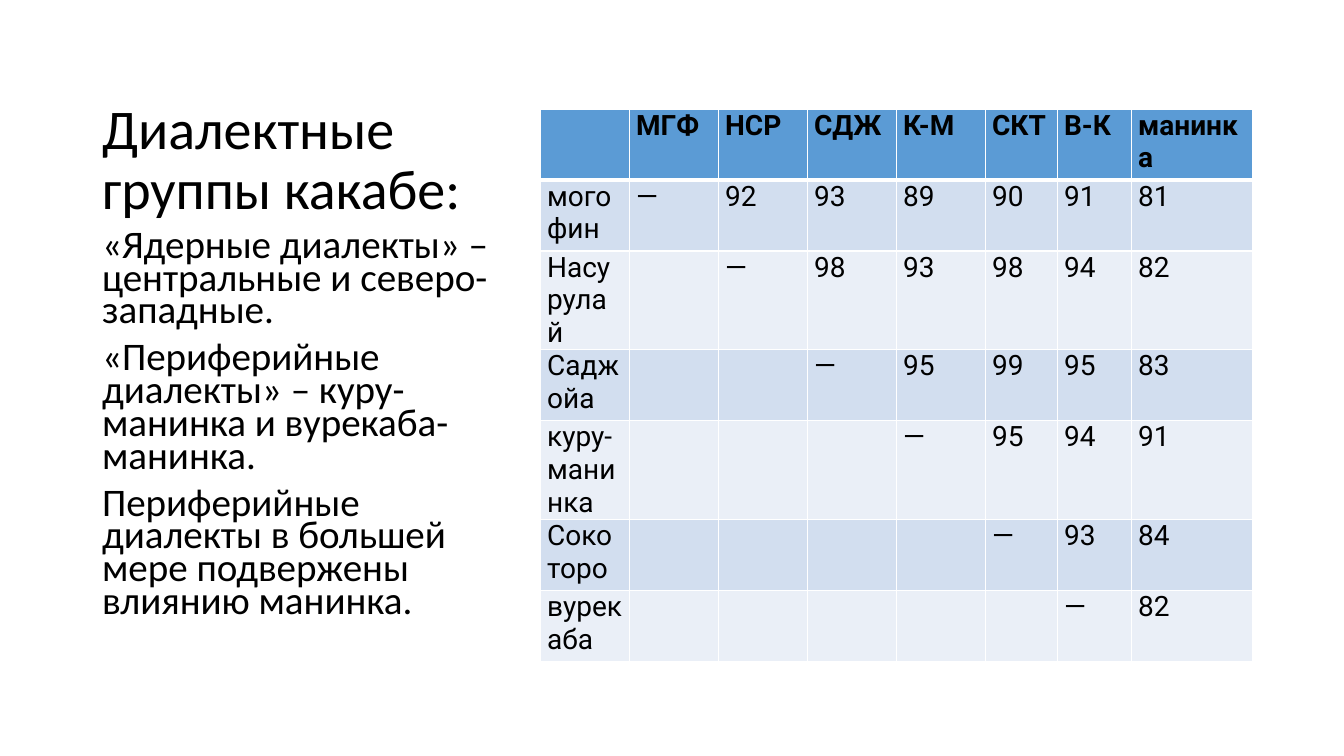
"""Build a slide on Kakabe dialect groups with a lexical similarity table."""
from lxml import etree
from pptx import Presentation
from pptx import util as u
from pptx.dml.color import RGBColor
from pptx.enum import text
from pptx.oxml.ns import qn

TITLE = "Диалектные группы какабе:"
STATEMENTS = [
    "«Ядерные диалекты» – центральные и северо-западные.",
    "«Периферийные диалекты» – куру-манинка и вурекаба-манинка.",
    "Периферийные диалекты в большей мере подвержены влиянию манинка.",
]
HEADINGS = ["", "МГФ", "НСР", "СДЖ", "К-М", "СКТ", "В-К", "манинка"]
SIMILARITY = [
    ("могофин", [92, 93, 89, 90, 91, 81]),
    ("Насурулай", [98, 93, 98, 94, 82]),
    ("Саджойа", [95, 99, 95, 83]),
    ("куру-манинка", [95, 94, 91]),
    ("Сокоторо", [93, 84]),
    ("вурекаба", [82]),
]
TITLE_BOX = (92, 50, 434, 177)
BODY_BOX = (92, 227, 434, 420)
TABLE_ORIGIN = (540, 109)
COLUMN_WIDTHS = [89, 89, 89, 89, 89, 72, 74, 121]
ROW_HEIGHTS = [71, 71, 71, 71, 95, 71, 71]

BLACK = RGBColor(0x00, 0x00, 0x00)
HEADER_BLUE = RGBColor(0x5B, 0x9B, 0xD5)
BANDS = [RGBColor(0xEA, 0xEF, 0xF7), RGBColor(0xD2, 0xDE, 0xEF)]
WHITE = RGBColor(0xFF, 0xFF, 0xFF)


def px(length):
    return u.Emu(round(length * 914400 / 100.8))


def format_paragraph(paragraph, font_name, size, bold=False):
    for run in paragraph.runs:
        run.font.name = font_name
        run.font.size = u.Pt(size)
        run.font.bold = bold
        run.font.color.rgb = BLACK


def place(shape, box, anchor):
    shape.left, shape.top, shape.width, shape.height = map(px, box)
    shape.text_frame.auto_size = text.MSO_AUTO_SIZE.NONE
    shape.text_frame.vertical_anchor = anchor


def add_borders(cell, bottom_width):
    properties = cell._tc.get_or_add_tcPr()
    widths = {"lnL": 1, "lnR": 1, "lnT": 1, "lnB": bottom_width}
    for position, (side, width) in enumerate(widths.items()):
        line = etree.Element(qn(f"a:{side}"), w=str(u.Pt(width)))
        fill = etree.SubElement(line, qn("a:solidFill"))
        etree.SubElement(fill, qn("a:srgbClr"), val=str(WHITE))
        properties.insert(position, line)


def add_title(slide):
    title = slide.shapes.title
    place(title, TITLE_BOX, text.MSO_ANCHOR.BOTTOM)
    title.text_frame.text = TITLE
    paragraph = title.text_frame.paragraphs[0]
    paragraph.alignment = text.PP_ALIGN.LEFT
    paragraph.line_spacing = 0.9
    format_paragraph(paragraph, "Calibri", 40)


def add_statements(slide):
    body = slide.placeholders[1]
    place(body, BODY_BOX, text.MSO_ANCHOR.TOP)
    body.text_frame.text = "\n".join(STATEMENTS)
    for paragraph in body.text_frame.paragraphs:
        paragraph.line_spacing = 0.7
        paragraph.space_before = u.Pt(10)
        properties = paragraph._p.get_or_add_pPr()
        properties.set("marL", "0")
        properties.set("indent", "0")
        etree.SubElement(properties, qn("a:buNone"))
        format_paragraph(paragraph, "Calibri", 27.9)


def add_similarity_table(slide):
    rows = [HEADINGS]
    for index, (dialect, values) in enumerate(SIMILARITY):
        rows.append([dialect] + [""] * index + ["—"] + values)
    size = (sum(COLUMN_WIDTHS), sum(ROW_HEIGHTS))
    table = slide.shapes.add_table(
        len(rows), len(HEADINGS), *map(px, TABLE_ORIGIN + size)).table
    for column, width in zip(table.columns, COLUMN_WIDTHS):
        column.width = px(width)
    for row_index, values in enumerate(rows):
        is_header = row_index == 0
        table.rows[row_index].height = px(ROW_HEIGHTS[row_index])
        for column_index, value in enumerate(values):
            cell = table.cell(row_index, column_index)
            cell.margin_left = cell.margin_right = px(7)
            cell.margin_top = cell.margin_bottom = 0
            cell.fill.solid()
            cell.fill.fore_color.rgb = HEADER_BLUE if is_header else BANDS[row_index % 2]
            add_borders(cell, 3 if is_header else 1)
            if value != "":
                cell.text_frame.text = str(value)
                format_paragraph(cell.text_frame.paragraphs[0], "Roboto", 20, is_header)


def main():
    presentation = Presentation()
    presentation.slide_width = u.Inches(13.33)
    presentation.slide_height = u.Inches(7.5)
    slide = presentation.slides.add_slide(presentation.slide_layouts[1])
    add_title(slide)
    add_similarity_table(slide)
    add_statements(slide)
    presentation.save("out.pptx")


if __name__ == "__main__":
    main()
